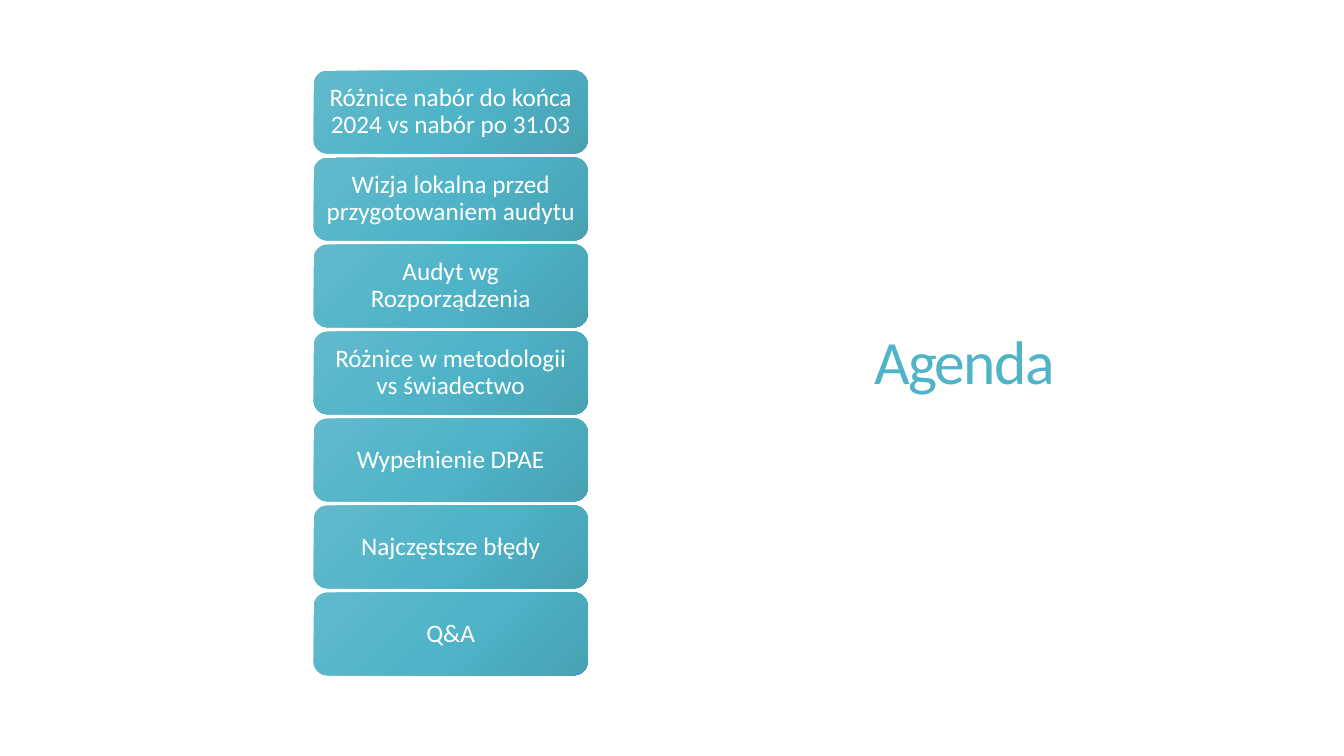
import copy

import pptx
import pptx.dml.color
import pptx.enum.shapes
import pptx.enum.text
import pptx.oxml.ns
import pptx.util

RGB = pptx.dml.color.RGBColor
LIGHT = RGB(0x61, 0xB9, 0xCB)
TEAL = RGB(0x50, 0xB4, 0xC8)
DARK = RGB(0x48, 0xA2, 0xB4)
WHITE = RGB(0xFF, 0xFF, 0xFF)

WIDE, HIGH = 13.33, 7.5

TOPICS = [
    "Różnice nabór do końca 2024 vs nabór po 31.03",
    "Wizja lokalna przed przygotowaniem audytu",
    "Audyt wg Rozporządzenia",
    "Różnice w metodologii vs świadectwo",
    "Wypełnienie DPAE",
    "Najczęstsze błędy",
    "Q&A",
]

# Column of cards, in inches
LEFT, TOP, WIDTH, BOTTOM, GAP = 3.11, 0.7, 2.72, 6.7, 0.04
CARD = (BOTTOM - TOP - GAP * (len(TOPICS) - 1)) / len(TOPICS)


class Deck:
    font = "Calibri"
    stops = [(0, LIGHT), (0.5, TEAL), (1, DARK)]

    def __init__(self, slide):
        self.slide = slide

    def label(self, shape, text, size, color, align, space):
        frame = shape.text_frame
        frame.text = text
        frame.word_wrap = True
        frame.auto_size = pptx.enum.text.MSO_AUTO_SIZE.NONE
        frame.vertical_anchor = pptx.enum.text.MSO_ANCHOR.MIDDLE
        para = frame.paragraphs[0]
        para.alignment = align
        para.line_spacing = space
        run = para.runs[0]
        run.font.name = self.font
        run.font.size = pptx.util.Pt(size)
        run.font.color.rgb = color
        return run

    def title(self, text, *box):
        shape = self.slide.shapes.title
        shape.left, shape.top, shape.width, shape.height = map(pptx.util.Inches, box)
        run = self.label(shape, text, 44, TEAL, pptx.enum.text.PP_ALIGN.LEFT, 0.85)
        run.font._element.set("spc", "-120")

    def shade(self, shape):
        fill = shape.fill
        fill.gradient()
        fill.gradient_angle = 315
        # The default gradient has two stops; add the middle one
        first = shape._element.spPr.find(".//" + pptx.oxml.ns.qn("a:gs"))
        first.addnext(copy.deepcopy(first))
        for stop, (place, color) in zip(fill.gradient_stops, self.stops):
            stop.position = place
            stop.color.rgb = color

    def card(self, text, row):
        top = TOP + row * (CARD + GAP)
        box = map(pptx.util.Inches, (LEFT, top, WIDTH, CARD))
        kind = pptx.enum.shapes.MSO_SHAPE.ROUNDED_RECTANGLE
        shape = self.slide.shapes.add_shape(kind, *box)
        shape.shadow.inherit = False
        shape.line.fill.background()
        self.shade(shape)
        frame = shape.text_frame
        frame.margin_left = frame.margin_right = pptx.util.Inches(0.07)
        frame.margin_top = frame.margin_bottom = pptx.util.Inches(0.04)
        self.label(shape, text, 18, WHITE, pptx.enum.text.PP_ALIGN.CENTER, 0.9)


def main():
    show = pptx.Presentation()
    show.slide_width = pptx.util.Inches(WIDE)
    show.slide_height = pptx.util.Inches(HIGH)
    deck = Deck(show.slides.add_slide(show.slide_layouts[5]))

    # Title on the right
    deck.title("Agenda", 8.57, 0.55, 4.05, 6.16)

    # Agenda cards, top to bottom
    for row, topic in enumerate(TOPICS):
        deck.card(topic, row)

    show.save("out.pptx")


if __name__ == "__main__":
    main()
